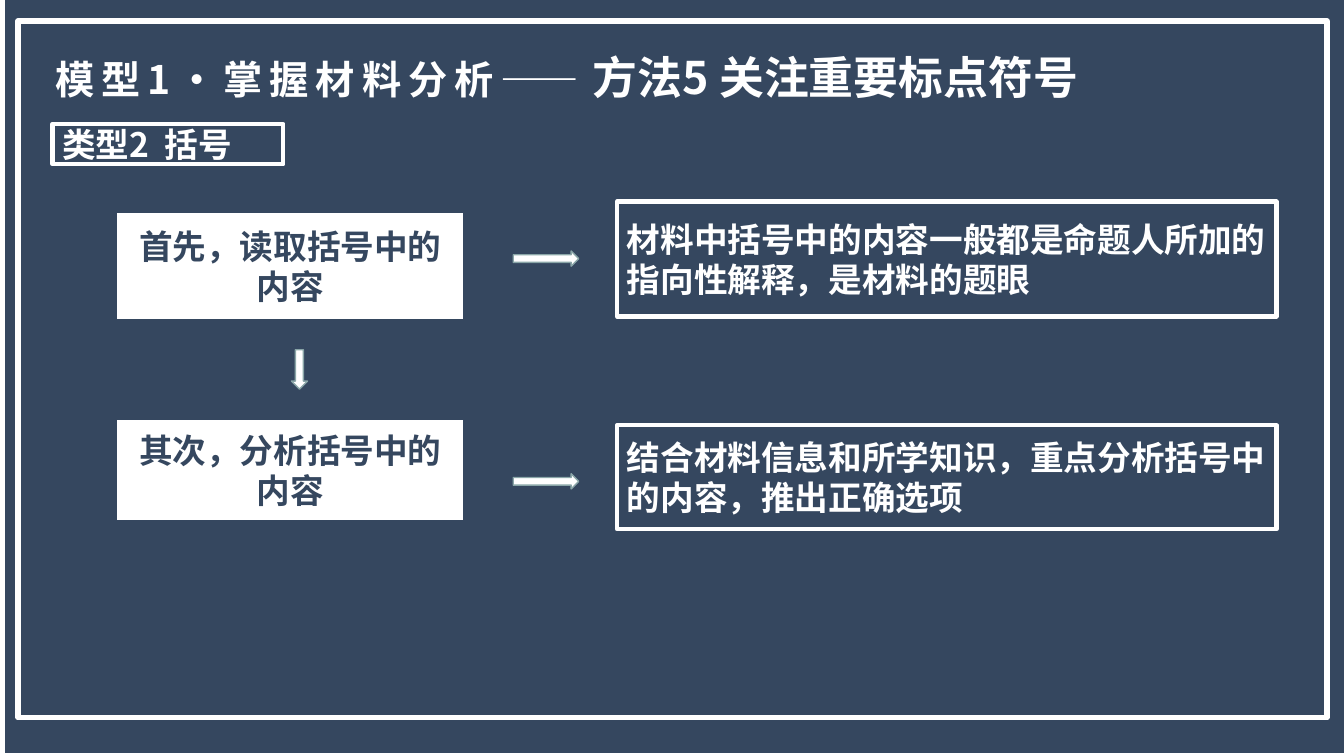
from lxml.etree import SubElement
from pptx import Presentation
from pptx.dml.color import RGBColor
from pptx.enum.shapes import MSO_SHAPE
from pptx.enum.text import MSO_ANCHOR, PP_ALIGN
from pptx.oxml.ns import qn
from pptx.util import Inches, Pt

FONT = "Noto Sans CJK SC"
COLORS = {"navy": "35475F", "white": "FFFFFF", "sage": "8AA6A8"}


def add_block(kind, bounds, fill=None, line=None, width=0):
    box = page.shapes.add_shape(kind, *[Inches(value) for value in bounds])
    box.shadow.inherit = False
    if fill:
        box.fill.solid()
        box.fill.fore_color.rgb = RGBColor.from_string(COLORS[fill])
    else:
        box.fill.background()
    if line:
        box.line.color.rgb = RGBColor.from_string(COLORS[line])
        box.line.width = Pt(width)
    else:
        box.line.fill.background()
    return box


def add_span(para, text, size, color, spacing=0):
    span = para.add_run()
    span.text = text
    span.font.size = Pt(size)
    span.font.bold = True
    span.font.name = FONT
    span.font.color.rgb = RGBColor.from_string(COLORS[color])
    properties = span.font._element
    properties.set("spc", str(spacing * 100))
    SubElement(properties, qn("a:ea")).set("typeface", FONT)


deck = Presentation()
deck.slide_width = Inches(13.33)
deck.slide_height = Inches(7.5)
page = deck.slides.add_slide(deck.slide_layouts[6])

add_block(MSO_SHAPE.RECTANGLE, (0.05, -0.03, 13.33, 7.5), fill="navy")
add_block(MSO_SHAPE.RECTANGLE, (0.18, 0.21, 12.98, 6.91), line="white", width=4)

title = page.shapes.add_textbox(Inches(0.45), Inches(0.44), Inches(11.97), Inches(1.11))
title.text_frame.word_wrap = True
title_para = title.text_frame.paragraphs[0]
add_span(title_para, "模型1·掌握材料分析——", 28, "white", 5)
add_span(title_para, "方法5 关注重要标点符号", 32, "white")

steps = [
    ("首先，读取括号中的内容", (1.15, 2.1, 3.46, 1.08)),
    ("其次，分析括号中的内容", (1.15, 4.15, 3.46, 1.02)),
]
outlined = [
    ("材料中括号中的内容一般都是命题人所加的指向性解释，是材料的题眼", (6.12, 2, 6.54, 1.14)),
    ("结合材料信息和所学知识，重点分析括号中的内容，推出正确选项", (6.12, 4.22, 6.54, 1.03)),
    ("类型2  括号", (0.52, 1.23, 2.29, 0.4)),
]
styles = [
    (steps, "white", "navy", 2.25, "navy", PP_ALIGN.CENTER),
    (outlined, None, "white", 3, "white", PP_ALIGN.LEFT),
]
for entries, fill, line, width, color, alignment in styles:
    for text, bounds in entries:
        box = add_block(MSO_SHAPE.RECTANGLE, bounds, fill, line, width)
        box.text_frame.word_wrap = True
        box.text_frame.vertical_anchor = MSO_ANCHOR.MIDDLE
        para = box.text_frame.paragraphs[0]
        para.alignment = alignment
        add_span(para, text, 24, color)

arrows = [
    (MSO_SHAPE.DOWN_ARROW, (2.89, 3.47, 0.16, 0.39)),
    (MSO_SHAPE.RIGHT_ARROW, (5.09, 2.49, 0.65, 0.15)),
    (MSO_SHAPE.RIGHT_ARROW, (5.09, 4.7, 0.65, 0.15)),
]
for kind, bounds in arrows:
    add_block(kind, bounds, "white", "sage", 1)

deck.save("out.pptx")
